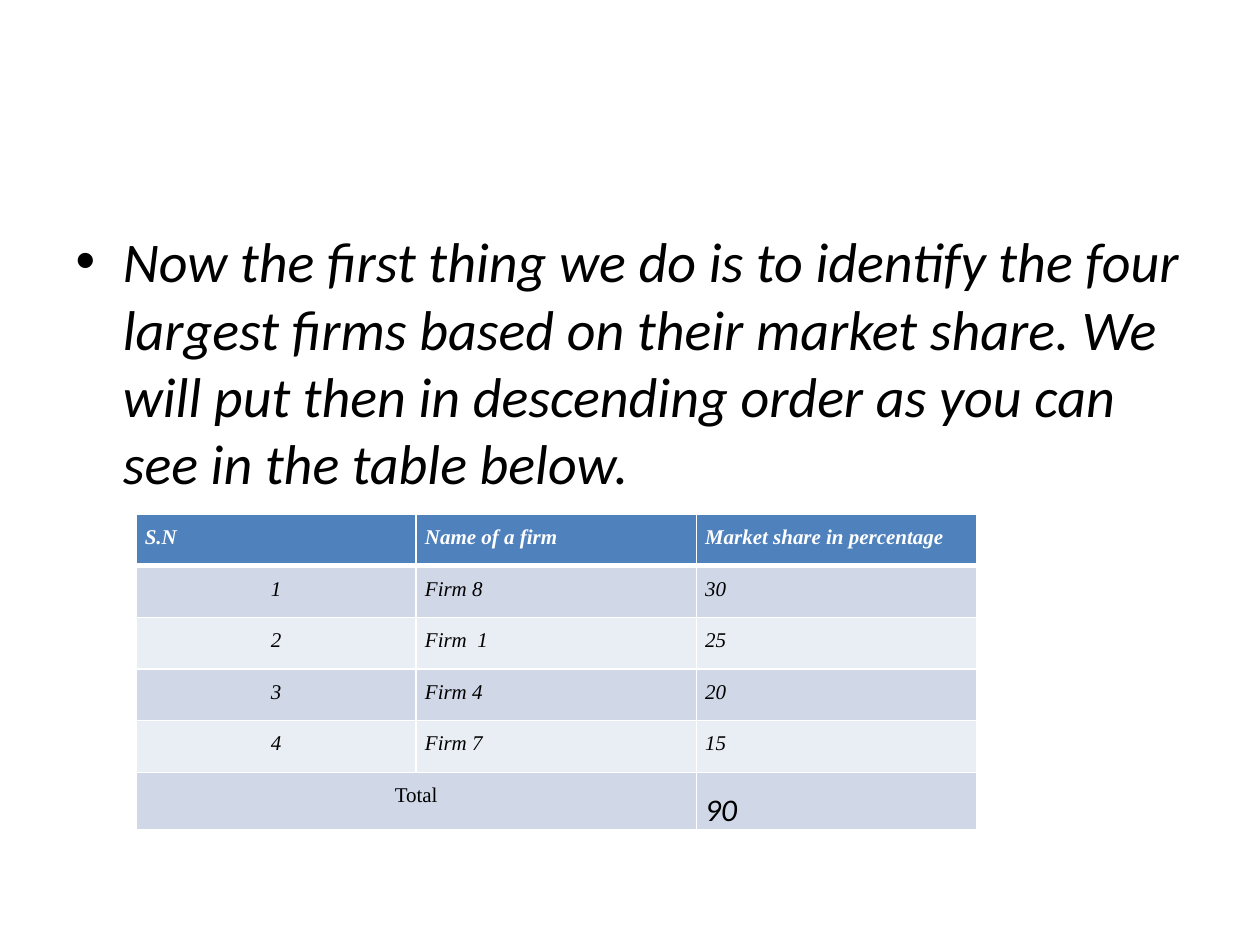
from lxml.etree import SubElement
from pptx import Presentation
from pptx.dml.color import RGBColor
from pptx.enum.text import PP_ALIGN as Align
from pptx.oxml.ns import qn
from pptx.util import Inches, Pt

WHITE, BLACK = "FFFFFF", "000000"
HEADER_FILL, BAND_FILLS = "4F81BD", ("D0D8E8", "E9EDF4")
BODY_TEXT = (
    "Now the first thing we do is to identify the four largest firms based on "
    "their market share. We will put then in descending order as you can see "
    "in the table below."
)
ROWS = [
    ("S.N", "Name of a firm ", "Market share in percentage "),
    ("1", "Firm 8", "30"),
    ("2", "Firm  1", "25"),
    ("3", "Firm 4", "20"),
    ("4", "Firm 7", "15"),
    ("Total", "", "90"),
]


def color(hex_string):
    return RGBColor.from_string(hex_string)


def format_runs(paragraph, name, size, hex_string, bold=False, italic=True):
    for run in paragraph.runs:
        font = run.font
        font.name, font.size = name, Pt(size)
        font.bold, font.italic = bold, italic
        font.color.rgb = color(hex_string)


def set_borders(cell, top=1, bottom=1):
    """Draw white cell borders; widths are in points."""
    properties = cell._tc.get_or_add_tcPr()
    for side, width in (("L", 1), ("R", 1), ("T", top), ("B", bottom)):
        line = SubElement(properties, qn(f"a:ln{side}"), w=str(Pt(width)))
        fill = SubElement(line, qn("a:solidFill"))
        SubElement(fill, qn("a:srgbClr"), val=WHITE)


def fill_body(placeholder, left, top, width, height):
    placeholder.left, placeholder.top = left, top
    placeholder.width, placeholder.height = width, height
    placeholder.text_frame.text = BODY_TEXT
    format_runs(placeholder.text_frame.paragraphs[0], "Calibri", 32, BLACK)


def format_cell(cell, text, row, column):
    is_header, is_total = row == 0, row == len(ROWS) - 1
    cell.margin_left = cell.margin_right = Inches(0.07)
    cell.margin_top = cell.margin_bottom = 0
    set_borders(cell, top=3 if row == 1 else 1, bottom=3 if is_header else 1)
    cell.fill.solid()
    cell.fill.fore_color.rgb = color(
        HEADER_FILL if is_header else BAND_FILLS[(row - 1) % 2])
    cell.text_frame.text = text
    paragraph = cell.text_frame.paragraphs[0]
    paragraph.line_spacing = 1.5
    centered = column == 0 and not is_header
    paragraph.alignment = Align.CENTER if centered else Align.JUSTIFY
    if is_total and column == 2:
        format_runs(paragraph, "Calibri", 18, BLACK)
    else:
        format_runs(paragraph, "Times New Roman", 12,
                    WHITE if is_header else BLACK,
                    bold=is_header, italic=not is_total)


def add_share_table(slide, left, top, width, height):
    column_count = len(ROWS[0])
    table = slide.shapes.add_table(
        len(ROWS), column_count, left, top, width, height).table
    for column in table.columns:
        column.width = width // column_count
    row_height = Inches(0.41)
    for row in table.rows:
        row.height = row_height
    table.rows[len(ROWS) - 1].height = height - row_height * (len(ROWS) - 1)
    for row, texts in enumerate(ROWS):
        for column, text in enumerate(texts):
            format_cell(table.cell(row, column), text, row, column)
    last = len(ROWS) - 1
    table.cell(last, 0).merge(table.cell(last, 1))


def main():
    presentation = Presentation()
    presentation.slide_width, presentation.slide_height = Inches(10), Inches(7.5)
    slide = presentation.slides.add_slide(presentation.slide_layouts[1])
    title = slide.shapes.title
    title.element.getparent().remove(title.element)
    fill_body(slide.placeholders[1],
              Inches(0.5), Inches(1.75), Inches(9), Inches(4.95))
    add_share_table(slide, Inches(1.08), Inches(4.08), Inches(6.67), Inches(2.48))
    presentation.save("out.pptx")


if __name__ == "__main__":
    main()
